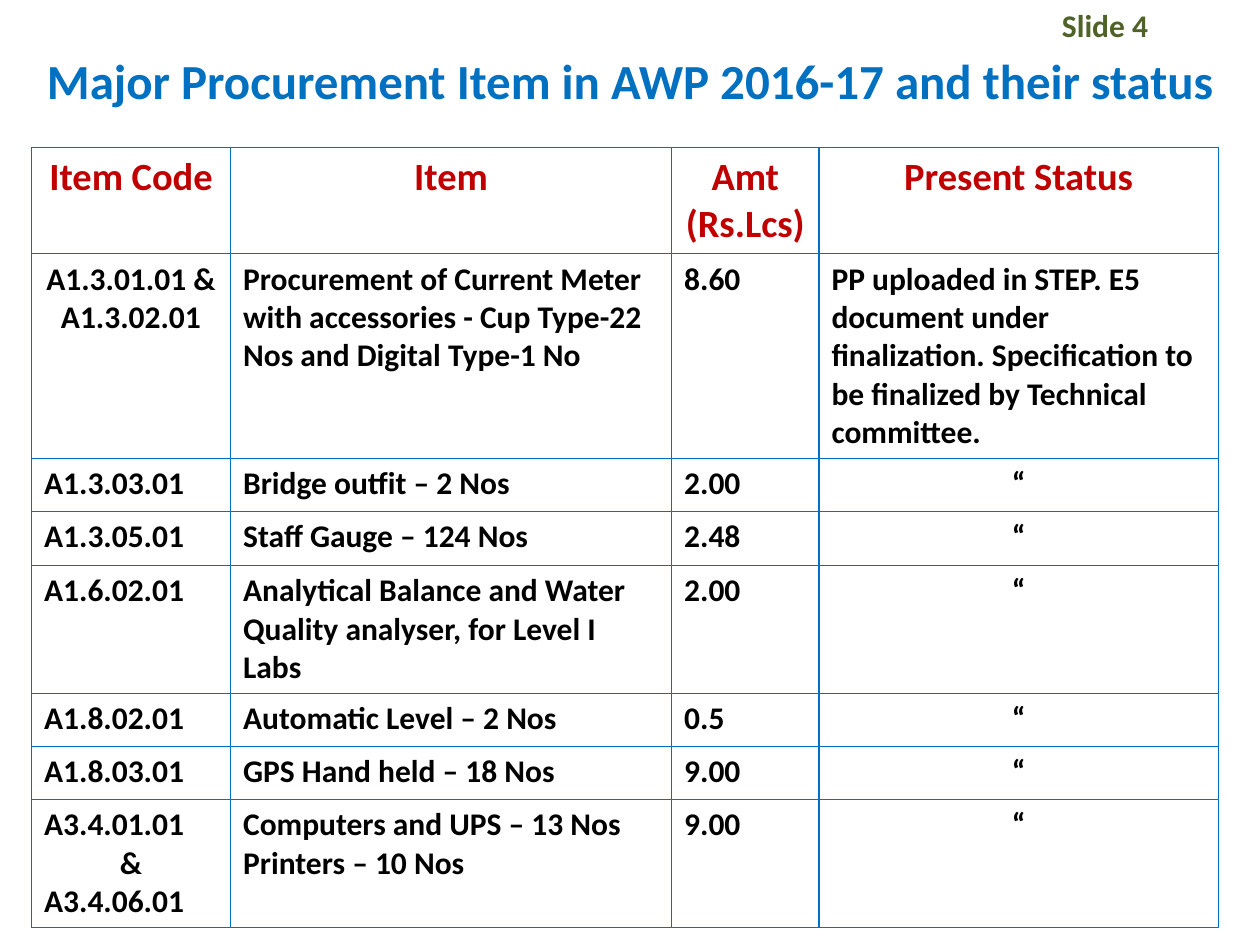
from lxml import etree
from pptx import Presentation
from pptx.dml.color import RGBColor
from pptx.enum.text import MSO_ANCHOR, PP_ALIGN
from pptx.oxml.ns import qn
from pptx.util import Inches, Pt

BLUE = RGBColor(0x00, 0x70, 0xC0)
RED = RGBColor(0xC0, 0x00, 0x00)
GREEN = RGBColor(0x4F, 0x62, 0x28)
BLACK = RGBColor(0x00, 0x00, 0x00)
LEFT, CENTER = PP_ALIGN.LEFT, PP_ALIGN.CENTER
MIDDLE, TOP = MSO_ANCHOR.MIDDLE, MSO_ANCHOR.TOP

COLUMN_WIDTHS = [1.58, 3.5, 1.17, 3.17]
ROW_HEIGHTS = [0.67, 0.96, 0.42, 0.43, 0.67, 0.42, 0.42, 0.96]
DITTO = "“"
ROWS = [
    ("Item Code", "Item", "Amt (Rs.Lcs)", "Present Status"),
    ("A1.3.01.01 &\nA1.3.02.01",
     "Procurement of Current Meter with accessories - Cup Type-22 Nos and Digital Type-1 No",
     "8.60",
     "PP uploaded in STEP. E5 document under finalization. "
     "Specification to be finalized by Technical committee."),
    ("A1.3.03.01", "Bridge outfit – 2 Nos", "2.00", DITTO),
    ("A1.3.05.01", "Staff Gauge – 124 Nos", "2.48", DITTO),
    ("A1.6.02.01", "Analytical Balance and Water Quality analyser, for Level I Labs",
     "2.00", DITTO),
    ("A1.8.02.01", "Automatic Level – 2 Nos", "0.5", DITTO),
    ("A1.8.03.01", "GPS Hand held – 18 Nos", "9.00", DITTO),
    ("A3.4.01.01\n&\nA3.4.06.01", "Computers and UPS – 13 Nos\nPrinters – 10 Nos",
     "9.00", DITTO),
]


def write(frame, text, size, color, align=LEFT):
    """Fill a text frame with bold Calibri, one paragraph per line of text."""
    frame.text = text
    for para in frame.paragraphs:
        para.alignment = CENTER if para.text in ("&", DITTO) else align
        font = para.runs[0].font
        for name, value in {"name": "Calibri", "size": Pt(size), "bold": True}.items():
            setattr(font, name, value)
        font.color.rgb = color


def add_borders(cell):
    """Draw a thin blue line on all four sides of a cell, under no fill."""
    cell.fill.background()
    properties = cell._tc.get_or_add_tcPr()
    for place, side in enumerate(("a:lnL", "a:lnR", "a:lnT", "a:lnB")):
        line = etree.Element(qn(side), w=str(Pt(1)))
        fill = etree.SubElement(line, qn("a:solidFill"))
        etree.SubElement(fill, qn("a:srgbClr"), val=str(BLUE))
        properties.insert(place, line)


deck = Presentation()
deck.slide_width, deck.slide_height = Inches(10), Inches(7.5)
page = deck.slides.add_slide(deck.slide_layouts[6])

grid = page.shapes.add_table(
    len(ROWS), len(COLUMN_WIDTHS), Inches(0.25), Inches(1.17),
    Inches(sum(COLUMN_WIDTHS)), Inches(sum(ROW_HEIGHTS))).table
grid.first_row = grid.horz_banding = False
for column, width in zip(grid.columns, COLUMN_WIDTHS):
    column.width = Inches(width)
for row, height in zip(grid.rows, ROW_HEIGHTS):
    row.height = Inches(height)

for r, texts in enumerate(ROWS):
    for c, text in enumerate(texts):
        cell = grid.cell(r, c)
        centered = r == 0 or (r, c) == (1, 0)
        size, color = (22, RED) if r == 0 else (18, BLACK)
        write(cell.text_frame, text, size, color, CENTER if centered else LEFT)
        add_borders(cell)

LABELS = [
    ("Major Procurement Item in AWP 2016-17 and their status",
     (0, 0.42, 10, 0.42), 28, BLUE, CENTER, MIDDLE),
    ("Slide 4", (8.33, 0, 1.67, 0.4), 18, GREEN, LEFT, TOP),
]
for text, place, size, color, align, anchor in LABELS:
    box = page.shapes.add_textbox(*map(Inches, place))
    box.text_frame.word_wrap = True
    box.text_frame.vertical_anchor = anchor
    write(box.text_frame, text, size, color, align)

deck.save("out.pptx")
